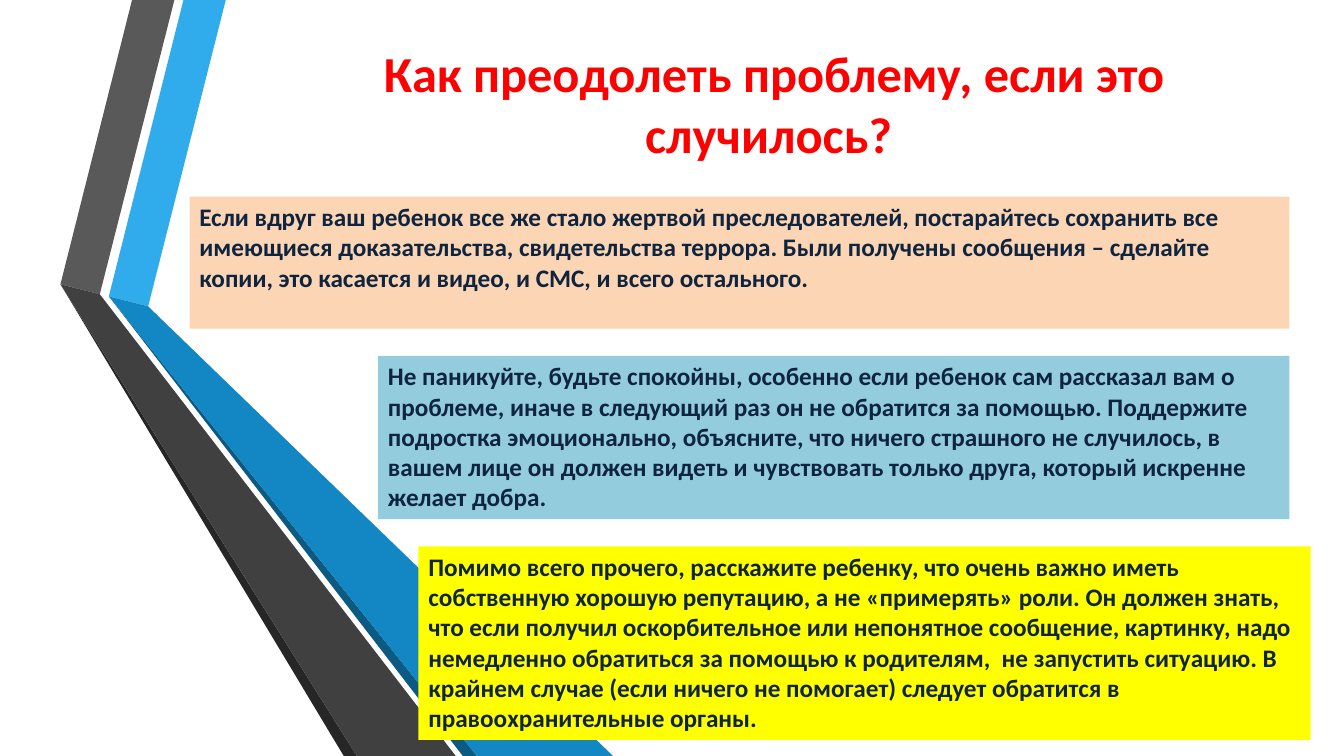
from dataclasses import dataclass

import pptx
import pptx.dml.color
import pptx.enum.shapes
import pptx.enum.text
import pptx.util
from pptx.util import Inches

PP_ALIGN = pptx.enum.text.PP_ALIGN
RIGHT_EDGE = 12.79


@dataclass(frozen=True)
class Ribbon:
    color: str
    points: tuple[tuple[float, float], ...]


@dataclass(frozen=True)
class Advice:
    left: float
    top: float
    width: float
    height: float
    color: str
    text: str


RIBBONS = (
    Ribbon("30ACEC", ((1.08, 2.94), (1.47, 3.04), (2.24, 0), (1.82, 0))),
    Ribbon("595959", ((0.99, 2.92), (1.73, 0), (1.31, 0), (0.6, 2.82))),
    Ribbon("262626", ((0.6, 2.82), (3.41, 7.5), (3.54, 7.5))),
    Ribbon("0C5A82", ((4.73, 7.5), (1.08, 2.94), (4.59, 7.5))),
    Ribbon("1287C3", ((1.08, 2.94), (4.73, 7.5), (6.08, 7.5), (1.47, 3.04))),
    Ribbon("404040", ((4.52, 7.5), (1.06, 3.01), (0.99, 2.92), (0.6, 2.82), (3.54, 7.5))),
)

ADVICE = (
    Advice(1.88, 1.95, RIGHT_EDGE - 1.88, 1.31, "FCD5B5",
           "Если вдруг ваш ребенок все же стало жертвой преследователей, постарайтесь "
           "сохранить все имеющиеся доказательства, свидетельства террора. Были получены "
           "сообщения – сделайте копии, это касается и видео, и СМС, и всего остального."),
    Advice(3.75, 3.53, RIGHT_EDGE - 3.75, 1.62, "93CDDD",
           "Не паникуйте, будьте спокойны, особенно если ребенок сам рассказал вам о "
           "проблеме, иначе в следующий раз он не обратится за помощью. Поддержите "
           "подростка эмоционально, объясните, что ничего страшного не случилось, в "
           "вашем лице он должен видеть и чувствовать только друга, который искренне "
           "желает добра."),
    Advice(4.15, 5.42, 8.85, 1.92, "FFFF00",
           "Помимо всего прочего, расскажите ребенку, что очень важно иметь собственную "
           "хорошую репутацию, а не «примерять» роли. Он должен знать, что если получил "
           "оскорбительное или непонятное сообщение, картинку, надо немедленно обратиться "
           "за помощью к родителям,  не запустить ситуацию. В крайнем случае (если ничего "
           "не помогает) следует обратится в правоохранительные органы."),
)

FRAME_FORMAT = {
    "word_wrap": True,
    "auto_size": pptx.enum.text.MSO_AUTO_SIZE.NONE,
    "vertical_anchor": pptx.enum.text.MSO_ANCHOR.TOP,
    "margin_left": Inches(0.1),
    "margin_right": Inches(0.1),
    "margin_top": Inches(0.05),
    "margin_bottom": Inches(0.05),
}


def paint(color_format, color: str) -> None:
    color_format.rgb = pptx.dml.color.RGBColor.from_string(color)


def fill_plain(shape, color: str) -> None:
    shape.shadow.inherit = False
    shape.fill.solid()
    paint(shape.fill.fore_color, color)
    shape.line.fill.background()


def write(shape, text: str, size: int, color: str, alignment) -> None:
    for name, value in FRAME_FORMAT.items():
        setattr(shape.text_frame, name, value)
    paragraph = shape.text_frame.paragraphs[0]
    paragraph.alignment = alignment
    run = paragraph.add_run()
    run.text = text
    font_format = {"name": "Calibri", "size": pptx.util.Pt(size), "bold": True}
    for name, value in font_format.items():
        setattr(run.font, name, value)
    paint(run.font.color, color)


def draw_ribbon(slide, ribbon: Ribbon) -> None:
    start, *rest = [(Inches(x), Inches(y)) for x, y in ribbon.points]
    builder = slide.shapes.build_freeform(*start)
    builder.add_line_segments(rest, close=True)
    fill_plain(builder.convert_to_shape(), ribbon.color)


def draw_advice(slide, advice: Advice) -> None:
    panel = slide.shapes.add_shape(
        pptx.enum.shapes.MSO_SHAPE.RECTANGLE,
        Inches(advice.left), Inches(advice.top),
        Inches(advice.width), Inches(advice.height))
    fill_plain(panel, advice.color)
    write(panel, advice.text, 18, "0F243E", PP_ALIGN.LEFT)


def main() -> None:
    deck = pptx.Presentation()
    deck.slide_width, deck.slide_height = Inches(13.33), Inches(7.5)
    slide = deck.slides.add_slide(deck.slide_layouts.get_by_name("Title Only"))

    # Folded ribbons on the left
    for ribbon in RIBBONS:
        draw_ribbon(slide, ribbon)

    # Heading
    heading = slide.shapes.title
    heading_place = {"left": 2.57, "top": 0.37, "width": 10.22, "height": 1.31}
    for name, value in heading_place.items():
        setattr(heading, name, Inches(value))
    write(heading, "Как преодолеть проблему, если это случилось? ", 36, "FF0000",
          PP_ALIGN.CENTER)

    # Advice panels
    for advice in ADVICE:
        draw_advice(slide, advice)

    deck.save("out.pptx")


if __name__ == "__main__":
    main()
